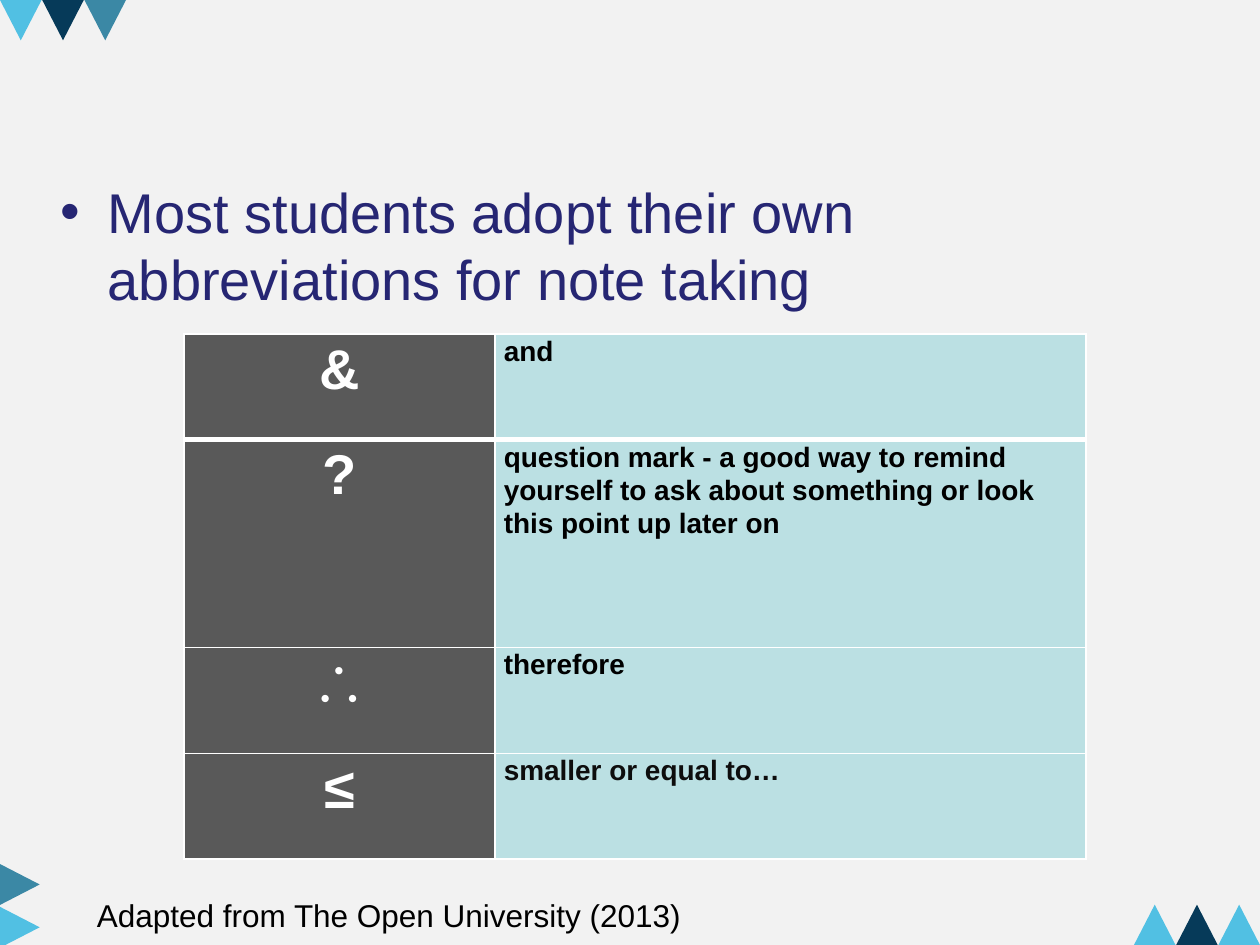
from lxml.etree import SubElement
from pptx import Presentation
from pptx.dml.color import RGBColor
from pptx.enum.shapes import MSO_SHAPE
from pptx.enum.text import PP_ALIGN
from pptx.oxml.ns import qn
from pptx.util import Inches, Pt

COLORS = {
    "background": "F2F2F2", "sky": "51C0E3", "navy": "063A59", "teal": "3B88A5",
    "heading": "262673", "symbol": "595959", "meaning": "BBE0E3",
    "white": "FFFFFF", "black": "000000", "soft_black": "0D0D0D",
}
ABBREVIATIONS = [
    ("&", "and", "black"),
    ("?", "question mark - a good way to remind yourself to ask about "
          "something or look this point up later on", "black"),
    ("∴", "therefore", "black"),
    ("≤", "smaller or equal to…", "soft_black"),
]
ROW_HEIGHTS = [0.84, 1.65, 0.84, 0.84]
COLUMN_WIDTHS = [2.47, 4.69]


def rgb(name):
    """Return the named colour."""
    return RGBColor.from_string(COLORS[name])


def add_run(paragraph, text, size, color, bold=False):
    """Add one formatted run to a paragraph."""
    run = paragraph.add_run()
    run.text = text
    run.font.name = "Arial"
    run.font.size = Pt(size)
    run.font.bold = bold
    run.font.color.rgb = rgb(color)


def add_triangles(slide, left, top, step_x, step_y, rotation, colors):
    """Place a row or column of corner triangles."""
    for index, color in enumerate(colors):
        shape = slide.shapes.add_shape(
            MSO_SHAPE.ISOSCELES_TRIANGLE,
            Inches(left + index * step_x), Inches(top + index * step_y),
            Inches(0.33), Inches(0.32))
        shape.rotation = rotation
        shape.shadow.inherit = False
        shape.fill.solid()
        shape.fill.fore_color.rgb = rgb(color)
        shape.line.fill.background()


def fill_body(slide, left, top, width, height):
    """Move the body placeholder and write its bullet."""
    title = slide.shapes.title
    title.element.getparent().remove(title.element)
    body = slide.placeholders[1]
    body.left, body.top = Inches(left), Inches(top)
    body.width, body.height = Inches(width), Inches(height)
    body.text_frame.margin_top = Inches(0.1)
    paragraph = body.text_frame.paragraphs[0]
    paragraph.space_before = Pt(0)
    add_run(paragraph, "Most students adopt their own abbreviations for note taking",
            32, "heading")


def set_borders(cell, top, bottom):
    """Draw white cell borders with the given top and bottom widths."""
    properties = cell._tc.get_or_add_tcPr()
    for side, width in (("L", 1), ("R", 1), ("T", top), ("B", bottom)):
        line = SubElement(properties, qn(f"a:ln{side}"), w=str(Pt(width)))
        solid = SubElement(line, qn("a:solidFill"))
        SubElement(solid, qn("a:srgbClr"), val=COLORS["white"])


def fill_cell(cell, text, size, color, fill, align):
    """Write and fill one table cell."""
    cell.margin_left = cell.margin_right = Inches(0.07)
    cell.margin_top = cell.margin_bottom = Inches(0)
    cell.fill.solid()
    cell.fill.fore_color.rgb = rgb(fill)
    paragraph = cell.text_frame.paragraphs[0]
    paragraph.alignment = align
    paragraph.line_spacing = 1.07
    add_run(paragraph, text, size, color, bold=True)


def add_abbreviations(slide, left, top):
    """Build the table of symbols and meanings."""
    table = slide.shapes.add_table(
        len(ROW_HEIGHTS), len(COLUMN_WIDTHS), Inches(left), Inches(top),
        Inches(sum(COLUMN_WIDTHS)), Inches(sum(ROW_HEIGHTS))).table
    table.horz_banding = False
    for column, width in zip(table.columns, COLUMN_WIDTHS):
        column.width = Inches(width)
    for index, (symbol, meaning, color) in enumerate(ABBREVIATIONS):
        row = table.rows[index]
        row.height = Inches(ROW_HEIGHTS[index])
        for cell in row.cells:
            set_borders(cell, 3 if index == 1 else 1, 3 if index == 0 else 1)
        fill_cell(row.cells[0], symbol, 32, "white", "symbol", PP_ALIGN.CENTER)
        fill_cell(row.cells[1], meaning, 16, color, "meaning", PP_ALIGN.LEFT)


def add_credit(slide, left, top, width, height):
    """Write the line that credits the origin of the table."""
    box = slide.shapes.add_textbox(
        Inches(left), Inches(top), Inches(width), Inches(height))
    box.text_frame.word_wrap = True
    add_run(box.text_frame.paragraphs[0], "Adapted from The Open University (2013)",
            18, "black")


def main():
    """Build and save the presentation."""
    presentation = Presentation()
    presentation.slide_width, presentation.slide_height = Inches(10), Inches(7.5)
    slide = presentation.slides.add_slide(presentation.slide_layouts[1])
    slide.background.fill.solid()
    slide.background.fill.fore_color.rgb = rgb("background")
    add_triangles(slide, -0.01, 6.86, 0, 0.34, 90, ["teal", "sky"])
    add_triangles(slide, 0, 0, 0.335, 0, 180, ["sky", "navy", "teal"])
    add_triangles(slide, 9, 7.18, 0.335, 0, 0, ["sky", "navy", "sky"])
    fill_body(slide, 0.38, 1.31, 9.24, 4.49)
    add_abbreviations(slide, 1.46, 2.65)
    add_credit(slide, 0.67, 7.06, 4.88, 0.4)
    presentation.save("out.pptx")


if __name__ == "__main__":
    main()
